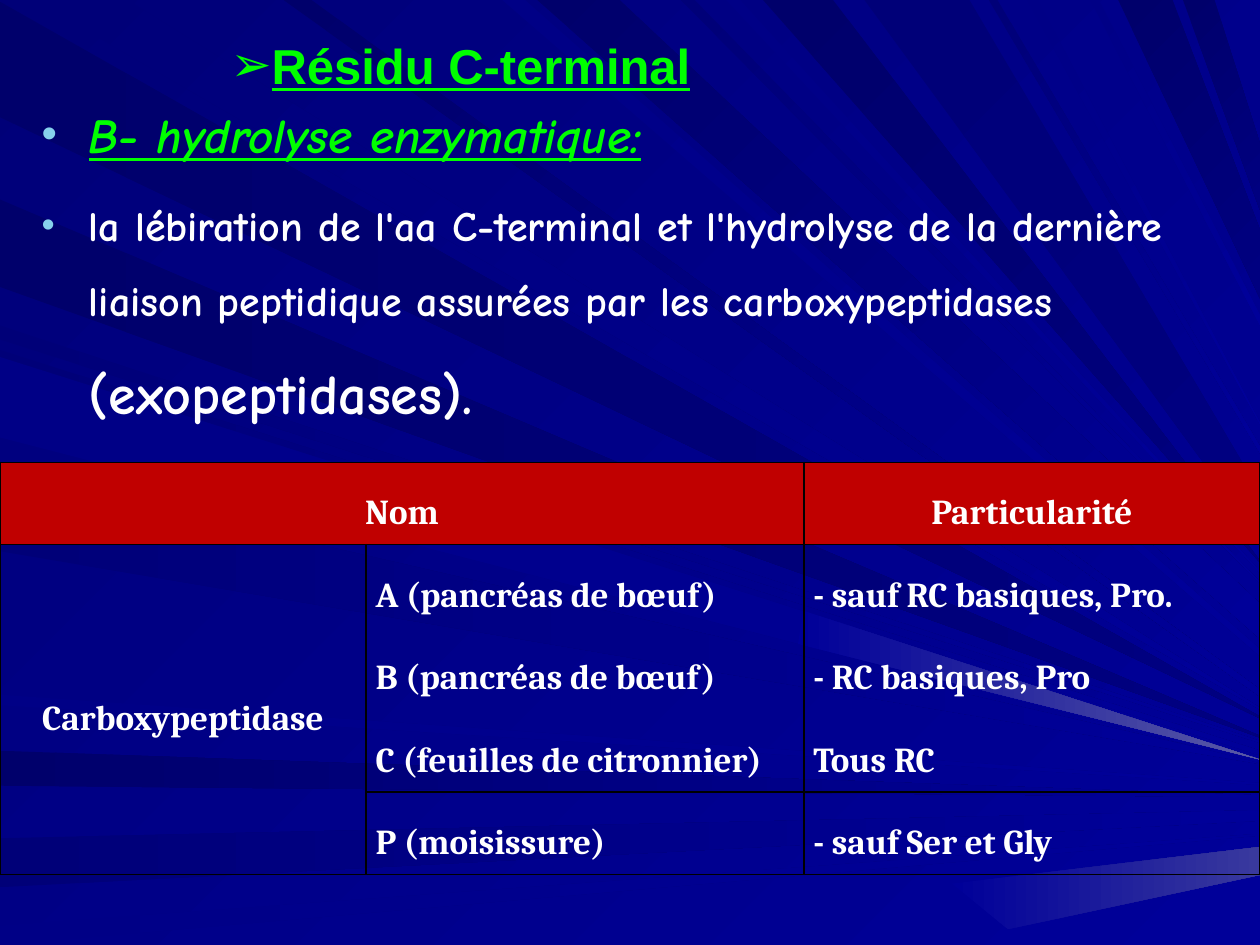
from dataclasses import dataclass
from enum import Enum
from typing import Optional

from lxml.etree import SubElement
from pptx import Presentation
from pptx.dml.color import RGBColor
from pptx.dml.fill import FillFormat
from pptx.enum.text import MSO_ANCHOR, MSO_AUTO_SIZE, PP_ALIGN
from pptx.oxml import parse_xml
from pptx.oxml.ns import nsdecls, qn
from pptx.slide import Slide
from pptx.table import Table, _Cell
from pptx.text.text import TextFrame
from pptx.util import Pt

DEEP = RGBColor(0x00, 0x00, 0x6B)
DARK = RGBColor(0x00, 0x00, 0x78)
NAVY = RGBColor(0x00, 0x00, 0x80)
SOFT = RGBColor(0x00, 0x00, 0x86)
ROYAL = RGBColor(0x00, 0x00, 0x99)
GLOW = RGBColor(0x5A, 0x5A, 0xA6)
DIM_GLOW = RGBColor(0x39, 0x39, 0x9E)
GREEN = RGBColor(0x00, 0xFF, 0x00)
WHITE = RGBColor(0xFF, 0xFF, 0xFF)
SKY = RGBColor(0x86, 0xD1, 0xEC)
RED = RGBColor(0xC0, 0x00, 0x00)
BLACK = RGBColor(0x00, 0x00, 0x00)
PAGE_WIDTH = 720
PAGE_HEIGHT = 540


class Edge(Enum):
    LEFT = 0
    TOP = 45


@dataclass(frozen=True)
class Ray:
    edge: Edge
    near: float
    far: float
    tip: float
    start: RGBColor
    end: RGBColor = ROYAL
    spread: float = 1


@dataclass(frozen=True)
class Line:
    spans: tuple[tuple[str, float], ...]
    font: str
    color: RGBColor
    level: int = 0
    bullet: str = "•"
    bullet_color: Optional[RGBColor] = SKY
    italic: bool = False
    underline: bool = False
    spacing: float = 1.0


RAYS = (
    Ray(Edge.LEFT, 1, 67, 410, DEEP, NAVY),
    Ray(Edge.TOP, 19, 73, 405, DARK),
    Ray(Edge.LEFT, 429, 449, 455, DEEP),
    Ray(Edge.LEFT, 479, 507, 466, DARK, spread=6),
    Ray(Edge.LEFT, 529, 540, 477, SOFT),
    Ray(Edge.LEFT, 186, 194, 424, DARK),
    Ray(Edge.LEFT, 114, 164, 421, DEEP, NAVY),
    Ray(Edge.TOP, 287, 300, 373, SOFT, spread=4),
    Ray(Edge.TOP, 307, 354, 355, DEEP, spread=20),
    Ray(Edge.TOP, 389, 397, 333, DARK),
    Ray(Edge.TOP, 436, 476, 321, DEEP, NAVY),
    Ray(Edge.TOP, 639, 670, 151, DEEP, NAVY, spread=39),
    Ray(Edge.TOP, 676, 694, 101, DEEP, NAVY, spread=38),
    Ray(Edge.LEFT, 200, 246, 431, DARK, spread=4),
    Ray(Edge.LEFT, 269, 315, 436, DARK),
    Ray(Edge.LEFT, 397, 403, 448, SOFT),
    Ray(Edge.TOP, 162, 178, 396, DEEP, spread=4),
    Ray(Edge.TOP, 415, 423, 327, SOFT),
    Ray(Edge.TOP, 494, 554, 295, DARK, NAVY, spread=27),
    Ray(Edge.TOP, 565, 570, 257, DARK, spread=4),
    Ray(Edge.TOP, 587, 593, 242, SOFT),
    Ray(Edge.TOP, 623, 628, 183, SOFT, spread=6),
    Ray(Edge.LEFT, 204, 250, 434, SOFT, spread=4),
)
GLOWS = (
    (((720, 434), (459, 349), (456, 368)), GLOW),
    (((720, 500), (720, 484), (544, 505), (576, 531)), DIM_GLOW),
)
LINES = (
    Line((("Résidu C-terminal", 28),), "Arial", GREEN, level=3, bullet="➢", bullet_color=None, underline=True),
    Line((("B- hydrolyse enzymatique:", 28),), "Comic Neue", GREEN, italic=True, underline=True),
    Line(
        (
            ("la lébiration de l'aa C-terminal et l'hydrolyse de la dernière liaison "
             "peptidique assurées par les carboxypeptidases ", 24),
            ("(exopeptidases).", 32),
        ),
        "Comic Neue", WHITE, spacing=1.5,
    ),
)
COLUMN_WIDTHS = (209.2, 250.2, 260.6)
ROW_HEIGHT = 47.1
ROWS = (
    ("Nom", "", "Particularité"),
    ("Carboxypeptidase", "A (pancréas de bœuf)", "- sauf RC basiques, Pro."),
    ("", "B (pancréas de bœuf)", "- RC basiques, Pro"),
    ("", "C (feuilles de citronnier)", "Tous RC"),
    ("", "P (moisissure)", "- sauf Ser et Gly"),
)


def paint_gradient(fill: FillFormat, start: RGBColor, end: RGBColor, angle: int) -> None:
    fill.gradient()
    fill.gradient_angle = -angle % 360
    for stop, color in zip(fill.gradient_stops, (start, end)):
        stop.color.rgb = color


def draw_outline(page: Slide, corners: tuple, start: RGBColor, end: RGBColor, angle: int) -> None:
    points = [(Pt(x), Pt(y)) for x, y in corners]
    builder = page.shapes.build_freeform(*points[0])
    builder.add_line_segments(points[1:], close=True)
    shape = builder.convert_to_shape()
    shape.shadow.inherit = False
    shape.line.fill.background()
    paint_gradient(shape.fill, start, end, angle)


def draw_ray(page: Slide, ray: Ray) -> None:
    upper = (PAGE_WIDTH, ray.tip - ray.spread / 2)
    lower = (PAGE_WIDTH, ray.tip + ray.spread / 2)
    if ray.edge is Edge.LEFT:
        corners = ((0, ray.near), upper, lower, (0, ray.far))
    else:
        corners = ((ray.far, 0), upper, lower, (ray.near, 0))
    draw_outline(page, corners, ray.start, ray.end, ray.edge.value)


def write_line(frame: TextFrame, index: int, line: Line) -> None:
    para = frame.add_paragraph() if index else frame.paragraphs[0]
    para.level = line.level
    para.line_spacing = line.spacing
    properties = para._p.get_or_add_pPr()
    if index == 0:
        para.space_before = Pt(0)
        properties.set("marL", str(Pt(126)))
        properties.set("indent", str(Pt(-18)))
    if line.bullet_color is not None:
        color = SubElement(properties, qn("a:buClr"))
        SubElement(color, qn("a:srgbClr"), val=str(line.bullet_color))
        SubElement(properties, qn("a:buSzPct"), val="90000")
    SubElement(properties, qn("a:buChar"), char=line.bullet)
    para.font.name = line.font
    para.font.bold = True
    para.font.italic = line.italic
    para.font.underline = line.underline
    para.font.color.rgb = line.color
    for text, size in line.spans:
        span = para.add_run()
        span.text = text
        span.font.size = Pt(size)


def draw_borders(cell: _Cell, hidden: set[str]) -> None:
    properties = cell._tc.get_or_add_tcPr()
    for position, side in enumerate(("lnL", "lnR", "lnT", "lnB")):
        fill = "<a:noFill/>" if side in hidden else f'<a:solidFill><a:srgbClr val="{BLACK}"/></a:solidFill>'
        border = parse_xml(f'<a:{side} {nsdecls("a")} w="{Pt(1)}">{fill}</a:{side}>')
        properties.insert(position, border)


def fill_cell(table: Table, row: int, column: int, text: str) -> None:
    cell = table.cell(row, column)
    cell.vertical_anchor = MSO_ANCHOR.MIDDLE
    cell.margin_left = cell.margin_right = Pt(5.4)
    cell.margin_top = cell.margin_bottom = Pt(0)
    if row == 0:
        cell.fill.solid()
        cell.fill.fore_color.rgb = RED
    else:
        cell.fill.background()
    open_sides = {"lnT": row in (2, 3), "lnB": row in (1, 2)}
    draw_borders(cell, {side for side, is_open in open_sides.items() if is_open and column})
    if not text:
        return
    para = cell.text_frame.paragraphs[0]
    para.text = text
    para.line_spacing = 1.5
    para.alignment = PP_ALIGN.CENTER if row == 0 or column == 0 else PP_ALIGN.LEFT
    para.font.name = "Cambria"
    para.font.size = Pt(20)
    para.font.bold = True
    para.font.color.rgb = WHITE


def draw_table(page: Slide) -> None:
    frame = page.shapes.add_table(
        len(ROWS), len(COLUMN_WIDTHS), Pt(0), Pt(264.2), Pt(PAGE_WIDTH), Pt(ROW_HEIGHT * len(ROWS)))
    table = frame.table
    table.first_row = table.horz_banding = False
    for column, width in zip(table.columns, COLUMN_WIDTHS):
        column.width = Pt(width)
    table.cell(0, 0).merge(table.cell(0, 1))
    table.cell(1, 0).merge(table.cell(4, 0))
    for row, texts in enumerate(ROWS):
        for column, text in enumerate(texts):
            fill_cell(table, row, column, text)


def main() -> None:
    deck = Presentation()
    deck.slide_width, deck.slide_height = Pt(PAGE_WIDTH), Pt(PAGE_HEIGHT)
    page = deck.slides.add_slide(deck.slide_layouts[1])
    paint_gradient(page.background.fill, DARK, ROYAL, 45)
    title, body = page.placeholders
    title._element.getparent().remove(title._element)
    for ray in RAYS:
        draw_ray(page, ray)
    for corners, color in GLOWS:
        draw_outline(page, corners, ROYAL, color, 0)
    page.shapes._spTree.append(body._element)
    body.left, body.top, body.width, body.height = Pt(16.6), Pt(16.6), Pt(703.4), Pt(193.7)
    body.text_frame.auto_size = MSO_AUTO_SIZE.NONE
    body.text_frame.vertical_anchor = MSO_ANCHOR.TOP
    for index, line in enumerate(LINES):
        write_line(body.text_frame, index, line)
    draw_table(page)
    deck.save("out.pptx")


if __name__ == "__main__":
    main()
